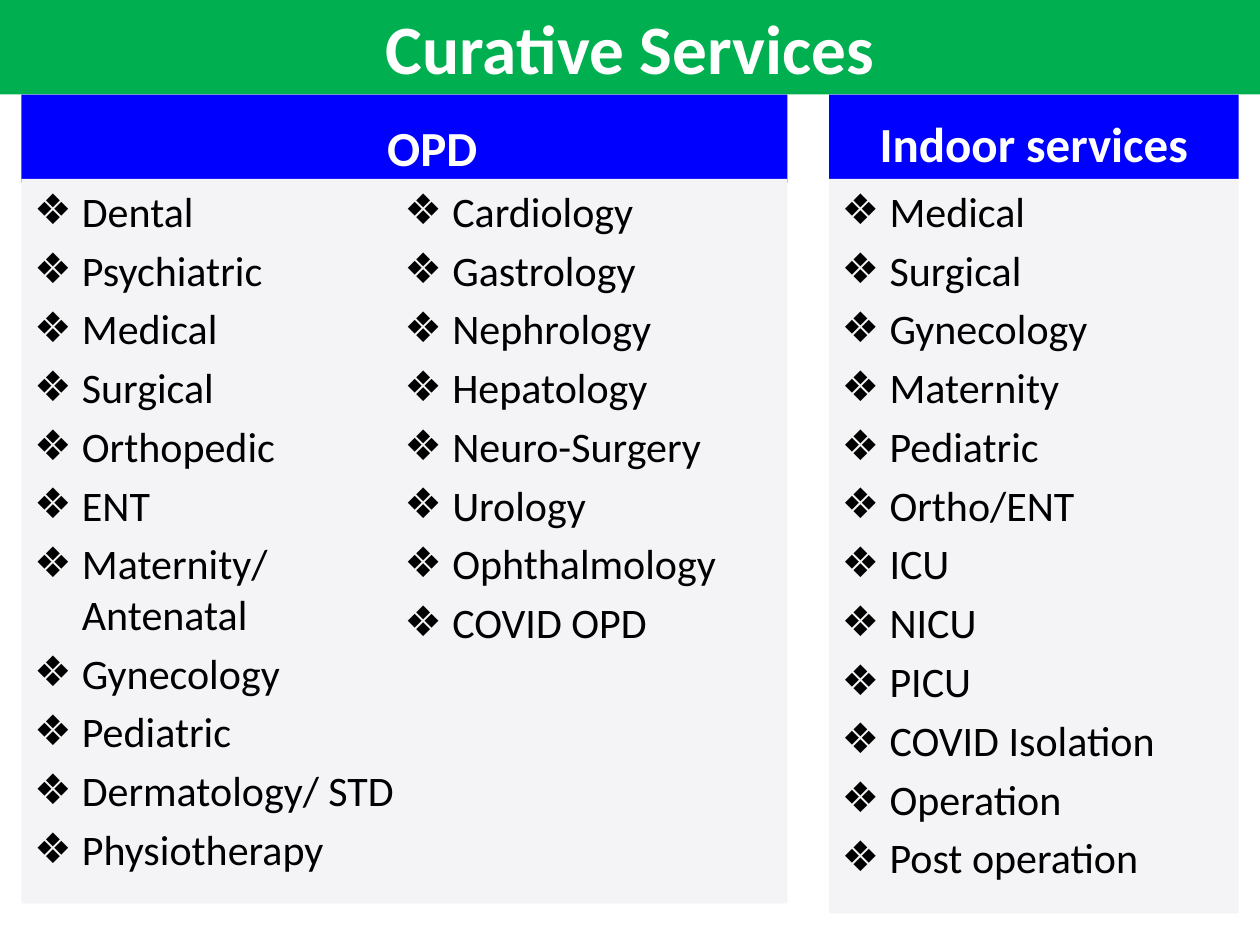
from lxml.etree import SubElement
from pptx import Presentation
from pptx.dml.color import RGBColor
from pptx.enum.text import MSO_ANCHOR as Anchor, MSO_AUTO_SIZE as AutoSize, PP_ALIGN as Align
from pptx.oxml.ns import qn
from pptx.util import Inches, Pt


class Theme:
    font = "Calibri"
    banner = RGBColor(0x00, 0xB0, 0x50)
    heading = RGBColor(0x00, 0x00, 0xFF)
    panel = RGBColor(0xF4, 0xF3, 0xF6)
    light = RGBColor(0xFF, 0xFF, 0xFF)
    dark = RGBColor(0x00, 0x00, 0x00)
    title_size = Pt(39.6)
    heading_size = Pt(28)
    list_size = Pt(24)


def fill_box(box, place, fill, lines, anchor, align, font_format):
    box.left, box.top, box.width, box.height = map(Inches, place)
    box.fill.solid()
    box.fill.fore_color.rgb = fill
    frame = box.text_frame
    frame.text = "\n".join(lines)
    frame.word_wrap = True
    frame.auto_size = AutoSize.NONE
    frame.vertical_anchor = anchor
    frame.paragraphs[0].space_before = Pt(0)
    for paragraph in frame.paragraphs:
        paragraph.alignment = align
        font = paragraph.runs[0].font
        color, *values = font_format
        font.color.rgb = color
        for name, value in zip(("size", "bold", "name"), values):
            setattr(font, name, value)


def add_bullets(frame):
    for paragraph in frame.paragraphs:
        properties = paragraph._p.get_or_add_pPr()
        properties.set("marL", str(Inches(0.38)))
        properties.set("indent", str(-Inches(0.38)))
        SubElement(properties, qn("a:buChar")).set("char", "❖")


title_format = (Theme.light, Theme.title_size, True, Theme.font)
heading_format = (Theme.light, Theme.heading_size, True, Theme.font)
list_format = (Theme.dark, Theme.list_size, False, Theme.font)

opd_services = [
    "Dental", "Psychiatric", "Medical", "Surgical", "Orthopedic", "ENT",
    "Maternity/ Antenatal", "Gynecology", "Pediatric", "Dermatology/ STD",
    "Physiotherapy", "Cardiology", "Gastrology", "Nephrology", "Hepatology",
    "Neuro-Surgery", "Urology", "Ophthalmology", "COVID OPD",
]
indoor_services = [
    "Medical", "Surgical", "Gynecology", "Maternity", "Pediatric", "Ortho/ENT",
    "ICU", "NICU", "PICU", "COVID Isolation", "Operation", "Post operation",
]

presentation = Presentation()
presentation.slide_width, presentation.slide_height = Inches(10), Inches(7.5)
comparison_layout = presentation.slide_layouts[4]
slide = presentation.slides.add_slide(comparison_layout)
title, opd_heading, opd_list, indoor_heading, indoor_list = slide.placeholders

fill_box(title, (0, 0, 10, 0.75), Theme.banner, ["Curative Services"],
         Anchor.MIDDLE, Align.CENTER, title_format)

# heading, list, heading text, services, left, width, heading height, list height
sections = [
    (opd_heading, opd_list, "OPD", opd_services, 0.17, 6.08, 0.7, 5.75),
    (indoor_heading, indoor_list, "Indoor services", indoor_services, 6.58, 3.25, 0.67, 5.83),
]
for heading, services, name, entries, left, width, heading_height, list_height in sections:
    fill_box(heading, (left, 0.75, width, heading_height), Theme.heading, [name],
             Anchor.BOTTOM, Align.CENTER, heading_format)
    fill_box(services, (left, 1.42, width, list_height), Theme.panel, entries,
             Anchor.TOP, Align.LEFT, list_format)
    add_bullets(services.text_frame)

# The OPD heading sits a little right of centre; its list runs in two columns.
opd_heading.text_frame.margin_left = Inches(0.54)
opd_list.text_frame._txBody.bodyPr.set("numCol", "2")

presentation.save("out.pptx")
